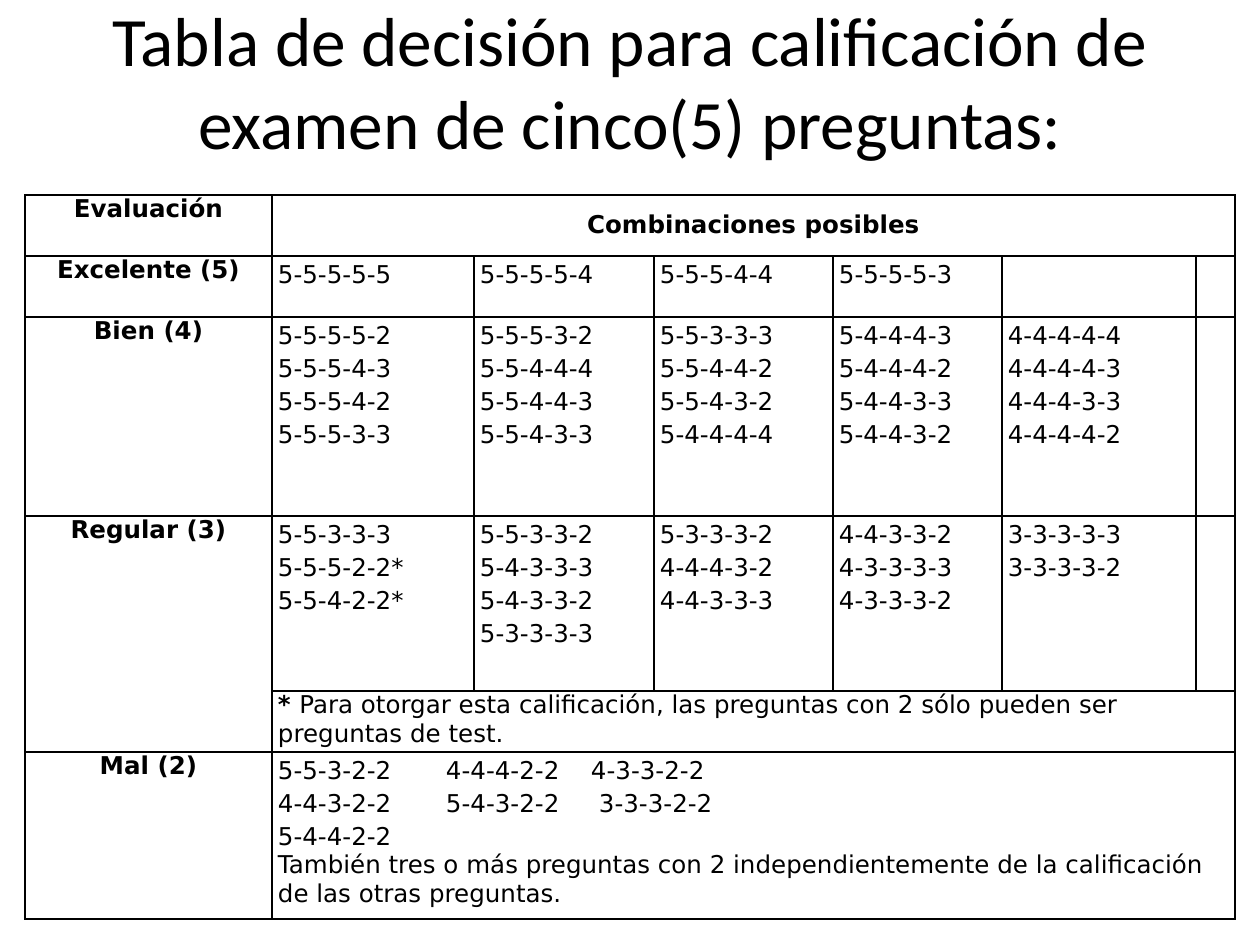
from dataclasses import dataclass
from typing import Optional

from lxml.etree import SubElement
from pptx import Presentation
from pptx.dml.color import RGBColor
from pptx.enum.text import MSO_ANCHOR as Anchor, MSO_AUTO_SIZE as AutoSize, PP_ALIGN as Align
from pptx.oxml.ns import qn
from pptx.util import Emu, Pt

COLORS = {"text": "000000", "border": "000000", "fill": "FFFFFF"}
TITLE_FONT, TABLE_FONT = "Calibri", "DejaVu Sans"
COLUMNS = [247, 202, 180, 179, 169, 194, 39]
ROWS = [61, 61, 199, 175, 61, 167]
NOTE = "Para otorgar esta calificación, las preguntas con 2 sólo pueden ser preguntas de test."
FAIL_RULE = ("También tres o más preguntas con 2 independientemente de la calificación "
             "de las otras preguntas.")


@dataclass
class Grade:
    row: int
    label: str
    columns: list[str]


GRADES = [
    Grade(1, "Excelente (5)", ["5-5-5-5-5", "5-5-5-5-4", "5-5-5-4-4", "5-5-5-5-3"]),
    Grade(2, "Bien (4)", [
        "5-5-5-5-2 5-5-5-4-3 5-5-5-4-2 5-5-5-3-3",
        "5-5-5-3-2 5-5-4-4-4 5-5-4-4-3 5-5-4-3-3",
        "5-5-3-3-3 5-5-4-4-2 5-5-4-3-2 5-4-4-4-4",
        "5-4-4-4-3 5-4-4-4-2 5-4-4-3-3 5-4-4-3-2",
        "4-4-4-4-4 4-4-4-4-3 4-4-4-3-3 4-4-4-4-2",
    ]),
    Grade(3, "Regular (3)", [
        "5-5-3-3-3 5-5-5-2-2* 5-5-4-2-2*",
        "5-5-3-3-2 5-4-3-3-3 5-4-3-3-2 5-3-3-3-3",
        "5-3-3-3-2 4-4-4-3-2 4-4-3-3-3",
        "4-4-3-3-2 4-3-3-3-3 4-3-3-3-2",
        "3-3-3-3-3 3-3-3-3-2",
    ]),
    Grade(5, "Mal (2)", []),
]
FAIL_LINES = [
    ("5-5-3-2-2\t4-4-4-2-2\t4-3-3-2-2", [168, 313]),
    ("4-4-3-2-2\t5-4-3-2-2\t3-3-3-2-2", [168, 321]),
    ("5-4-4-2-2", []),
]


def px(length: int) -> Emu:
    return Emu(round(length * 914400 / 126))


def style_span(span, font: str, size: float, bold: bool = False) -> None:
    span.font.name, span.font.size, span.font.bold = font, Pt(size), bold
    span.font.color.rgb = RGBColor.from_string(COLORS["text"])


def add_line(cell, text: str, bold: bool = False, align: Align = Align.LEFT,
             spacing: Optional[float] = None):
    """Write into the cell's first paragraph if it is empty, else into a new one."""
    frame = cell.text_frame
    para = frame.add_paragraph() if frame.text else frame.paragraphs[0]
    para.text = text
    para.alignment = align
    if spacing:
        para.line_spacing = spacing
    for span in para.runs:
        style_span(span, TABLE_FONT, 14, bold)
    return para


def add_label(cell, text: str) -> None:
    add_line(cell, text, bold=True, align=Align.CENTER)


def add_combination(cell, text: str):
    return add_line(cell, text, spacing=1.15)


def set_tab_stops(para, stops: list[int]) -> None:
    properties = para._p.get_or_add_pPr()
    tabs = SubElement(properties, qn("a:tabLst"))
    for stop in stops:
        SubElement(tabs, qn("a:tab"), pos=str(px(stop)), algn="l")


def format_cell(cell) -> None:
    cell.margin_left = cell.margin_right = px(6)
    cell.margin_top = cell.margin_bottom = 0
    cell.vertical_anchor = Anchor.TOP
    properties = cell._tc.get_or_add_tcPr()
    for side in ("lnL", "lnR", "lnT", "lnB"):
        line = SubElement(properties, qn(f"a:{side}"), w=str(Pt(1)))
        fill = SubElement(line, qn("a:solidFill"))
        SubElement(fill, qn("a:srgbClr"), val=COLORS["border"])
    cell.fill.solid()
    cell.fill.fore_color.rgb = RGBColor.from_string(COLORS["fill"])


def add_title(page) -> None:
    title = page.shapes.title
    title.left, title.top, title.width, title.height = px(63), px(38), px(1134), px(157)
    frame = title.text_frame
    frame.text = "Tabla de decisión para calificación de examen de cinco(5) preguntas:"
    frame.word_wrap = True
    frame.auto_size = AutoSize.NONE
    frame.vertical_anchor = Anchor.MIDDLE
    frame.margin_bottom = px(78)
    para = frame.paragraphs[0]
    para.alignment = Align.CENTER
    style_span(para.runs[0], TITLE_FONT, 39.6)


def add_grid(page):
    frame = page.shapes.add_table(len(ROWS), len(COLUMNS), px(25), px(195),
                                  px(sum(COLUMNS)), px(sum(ROWS)))
    table = frame.table
    table.first_row = table.horz_banding = False
    for column, width in zip(table.columns, COLUMNS):
        column.width = px(width)
    for row, height in zip(table.rows, ROWS):
        row.height = px(height)
    for cell in table.iter_cells():
        format_cell(cell)
    for row in (0, 4, 5):
        table.cell(row, 1).merge(table.cell(row, len(COLUMNS) - 1))
    table.cell(3, 0).merge(table.cell(4, 0))
    return table


def fill_grid(table) -> None:
    add_label(table.cell(0, 0), "Evaluación")
    add_label(table.cell(0, 1), "Combinaciones posibles")
    table.cell(0, 1).vertical_anchor = Anchor.MIDDLE

    for grade in GRADES:
        add_label(table.cell(grade.row, 0), grade.label)
        for column, combinations in enumerate(grade.columns, start=1):
            for combination in combinations.split():
                add_combination(table.cell(grade.row, column), combination)

    note = add_line(table.cell(4, 1), "* ", bold=True)
    span = note.add_run()
    span.text = NOTE
    style_span(span, TABLE_FONT, 14)

    fail_cell = table.cell(5, 1)
    for text, stops in FAIL_LINES:
        para = add_combination(fail_cell, text)
        if stops:
            set_tab_stops(para, stops)
    add_line(fail_cell, FAIL_RULE)


def main() -> None:
    deck = Presentation()
    deck.slide_width, deck.slide_height = px(1260), px(945)
    page = deck.slides.add_slide(deck.slide_layouts[5])
    add_title(page)
    fill_grid(add_grid(page))
    deck.save("out.pptx")


if __name__ == "__main__":
    main()
